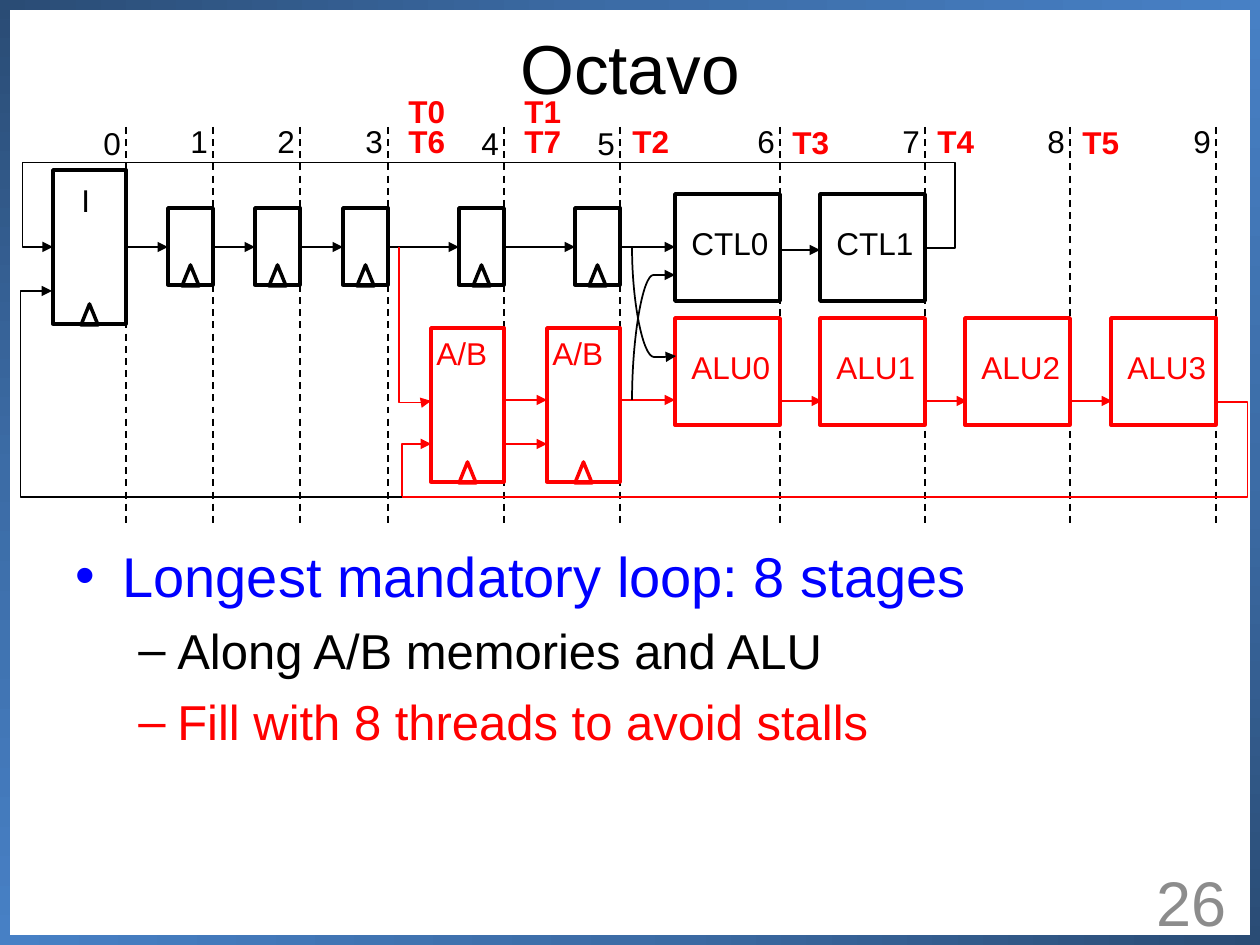
import math
from lxml import etree
from pptx import Presentation
from pptx import util as u
from pptx.dml.color import RGBColor
from pptx.enum import dml, shapes, text
from pptx.oxml.ns import qn

BLACK = RGBColor(0x00, 0x00, 0x00)
RED = RGBColor(0xFF, 0x00, 0x00)
BLUE = RGBColor(0x00, 0x00, 0xFF)
GREY = RGBColor(0x8C, 0x8C, 0x8C)
STOPS = [(0, RGBColor(0x2A, 0x4C, 0x75)), (50, RGBColor(0x3C, 0x6C, 0xA6)),
         (100, RGBColor(0x47, 0x80, 0xC5))]
FONT = "Arial"
SCALE = u.Inches(1) / 126
STRAIGHT, ELBOW, CURVE = (shapes.MSO_CONNECTOR.STRAIGHT, shapes.MSO_CONNECTOR.ELBOW,
                          shapes.MSO_CONNECTOR.CURVE)


def emu(*px):
    return [round(v * SCALE) for v in px]


def sub(parent, tag, **attrs):
    return etree.SubElement(parent, qn(tag), {k: str(v) for k, v in attrs.items()})


class Board:
    def __init__(self, slide):
        self.slide = slide

    def style(self, para, size, color, bold=False):
        para.font.name, para.font.size, para.font.bold = FONT, u.Pt(size), bold
        para.font.color.rgb = color

    def bar(self, x, y, w, h, angle):
        """Frame edge with a gradient running along it."""
        bar = self.slide.shapes.add_shape(shapes.MSO_SHAPE.RECTANGLE, *emu(x, y, w, h))
        bar.shadow.inherit = False
        bar.line.fill.background()
        grad = etree.Element(qn("a:gradFill"), rotWithShape="1")
        stops = sub(grad, "a:gsLst")
        for pos, color in STOPS:
            sub(sub(stops, "a:gs", pos=pos * 1000), "a:srgbClr", val=color)
        sub(grad, "a:lin", ang=angle * 60000, scaled=0)
        bar._element.spPr.find(qn("a:prstGeom")).addnext(grad)

    def frame(self, x, y, w, h, words, size, align):
        """Wrapped text, centred on its height."""
        box = self.slide.shapes.add_textbox(*emu(x, y, w, h)).text_frame
        box.word_wrap = True
        box.vertical_anchor = text.MSO_ANCHOR.MIDDLE
        para = box.paragraphs[0]
        para.text, para.alignment = words, align
        return para

    def label(self, x, y, w, words, color=BLACK, bold=False):
        box = self.slide.shapes.add_textbox(*emu(x, y, w, 50)).text_frame
        box.word_wrap = False
        box.auto_size = text.MSO_AUTO_SIZE.SHAPE_TO_FIT_TEXT
        box.text = words
        self.style(box.paragraphs[0], 18, color, bold)

    def box(self, x, y, w, h, color, kind=shapes.MSO_SHAPE.RECTANGLE, home=None):
        box = (home or self.slide).shapes.add_shape(kind, *emu(x, y, w, h))
        box.shadow.inherit = False
        box.fill.background()
        box.line.color.rgb, box.line.width = color, u.Pt(2)

    def latch(self, x, y, w, h, color):
        """Register: a box with a clock mark on its bottom edge."""
        group = self.slide.shapes.add_group_shape()
        self.box(x, y, w, h, color, home=group)
        self.box(x + (w - 17) // 2, y + h - 20, 17, 21, color,
                 shapes.MSO_SHAPE.ISOSCELES_TRIANGLE, group)

    def link(self, start, end, color=BLACK, kind=STRAIGHT, turn=0, bends=(),
             head=True, dash=False):
        """Line between two points; a turned one is laid out before its rotation."""
        (ax, ay), (bx, by) = start, end
        sin, cos = round(math.sin(math.radians(turn))), round(math.cos(math.radians(turn)))
        dx, dy = bx - ax, by - ay
        w, h = dx * cos + dy * sin, dy * cos - dx * sin
        mx, my = (ax + bx) / 2, (ay + by) / 2
        line = self.slide.shapes.add_connector(
            kind, *emu(mx - w / 2, my - h / 2, mx + w / 2, my + h / 2))
        line.line.color.rgb, line.line.width = color, u.Pt(1)
        if dash:
            line.line.dash_style = dml.MSO_LINE.DASH
        prop = line._element.spPr
        if turn:
            prop.find(qn("a:xfrm")).set("rot", str(turn * 60000))
        if bends:
            geom = prop.find(qn("a:prstGeom"))
            if len(bends) == 3:
                geom.set("prst", "bentConnector5")
            guides = geom.find(qn("a:avLst"))
            if guides is None:
                guides = sub(geom, "a:avLst")
            for i, bend in enumerate(bends, 1):
                sub(guides, "a:gd", name=f"adj{i}", fmla=f"val {round(bend * 100000)}")
        if head:
            sub(prop.find(qn("a:ln")), "a:tailEnd", type="triangle")
        sub(prop, "a:effectLst")

    def bullets(self, x, y, w, h, rows):
        box = self.slide.shapes.add_textbox(*emu(x, y, w, h)).text_frame
        box.word_wrap = True
        for i, (words, level, size, color) in enumerate(rows):
            para = box.add_paragraph() if i else box.paragraphs[0]
            para.text, para.level, para.space_before = words, level, u.Pt(7)
            self.style(para, size, color)
            left, hang, mark = [(47, 47, "•"), (102, 39, "–")][level]
            prop = para._p.get_or_add_pPr()
            prop.set("marL", str(emu(left)[0]))
            prop.set("indent", str(emu(-hang)[0]))
            mark = etree.Element(qn("a:buChar"), char=mark)
            face = etree.Element(qn("a:buFont"), typeface=FONT)
            prop.find(qn("a:spcBef")).addnext(face)
            face.addnext(mark)


def main():
    deck = Presentation()
    deck.slide_width, deck.slide_height = emu(1260, 945)
    b = Board(deck.slides.add_slide(deck.slide_layouts[6]))

    # Frame, title and page number
    for edge in [(0, 0, 10, 945, 90), (1250, 0, 10, 945, 270),
                 (0, 935, 1260, 10, 180), (0, 0, 1260, 10, 0)]:
        b.bar(*edge)
    title = b.frame(63, 38, 1134, 57, "Octavo", 39.6, text.PP_ALIGN.CENTER)
    b.style(title, 39.6, BLACK)
    page = b.frame(945, 876, 294, 50, "26", 36, text.PP_ALIGN.RIGHT)
    b.style(page, 36, GREY)

    # Stage borders and numbers
    stages = [126, 213, 300, 388, 504, 620, 780, 925, 1070, 1216]
    for i, x in enumerate(stages):
        b.link((x, 127), (x, 527), head=False, dash=True)
        b.label(x - 35, 118 if i in (0, 4, 5) else 116, 43, str(i))

    # Registers and memories, right edges on the stage borders
    b.latch(53, 170, 73, 154, BLACK)
    for x in stages[1:6]:
        b.latch(x - 45, 208, 45, 77, BLACK)
    for x in stages[4:6]:
        b.latch(x - 73, 328, 73, 154, RED)
        b.label(x - 80, 328, 77, "A/B", RED)
    b.label(69, 175, 34, "I")

    # Control and arithmetic units
    for name, y, drop, color, ends in [("CTL", 194, 24, BLACK, stages[6:8]),
                                       ("ALU", 318, 24, RED, stages[6:])]:
        for i, x in enumerate(ends):
            b.box(x - 105, y, 105, 107, color)
            b.label(x - 101, y + drop, 104, f"{name}{i}", color)

    # Straight arrows
    for left, right in zip(stages[:5], stages[1:6]):
        b.link((left, 247), (right - 45, 247))
    b.link((620, 247), (675, 247))
    b.link((780, 250), (820, 250))
    for x in stages[6:9]:
        b.link((x, 401), (x + 42, 401), RED)
    b.link((620, 400), (675, 400), RED)
    for y in (400, 444):
        b.link((504, y), (547, y), RED)

    # Feeds, crossings and return loops
    b.link((399, 247), (431, 401), RED, ELBOW, 270, [1.01])
    b.link((402, 497), (431, 444), RED, ELBOW, 90, [1])
    b.link((632, 400), (675, 275), BLACK, CURVE, 90, [1])
    b.link((632, 248), (676, 356), BLACK, CURVE, 270, [1.01])
    b.link((925, 248), (53, 247), BLACK, ELBOW, 0, [-0.035, 86, 1.035])
    b.link((402, 497), (52, 291), BLACK, ELBOW, 180, [1.09])
    b.link((1215, 402), (402, 497), RED, ELBOW, 0, [-0.04], head=False)

    # Threads
    for name, x, y in [("T0", 396, 86), ("T6", 396, 116), ("T1", 512, 86), ("T7", 512, 116),
                       ("T2", 620, 116), ("T3", 780, 117), ("T4", 925, 116), ("T5", 1070, 117)]:
        b.label(x, y, 63, name, RED, True)

    # Findings
    b.bullets(63, 535, 1134, 325, [
        ("Longest mandatory loop: 8 stages", 0, 32, BLUE),
        ("Along A/B memories and ALU", 1, 28, BLACK),
        ("Fill with 8 threads to avoid stalls", 1, 28, RED)])

    deck.save("out.pptx")


if __name__ == "__main__":
    main()
